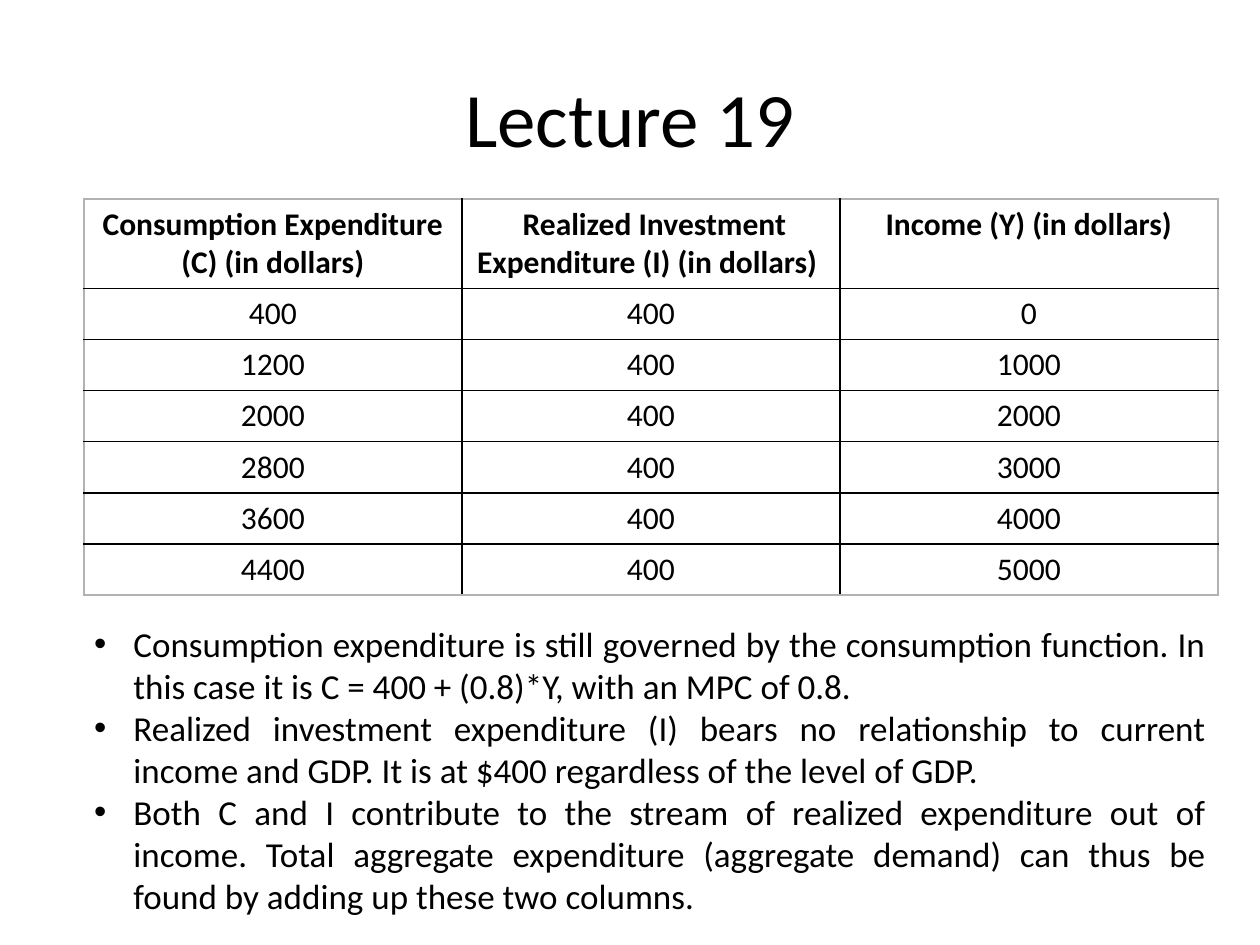
"""Build the Lecture 19 slide on consumption, investment and income."""
from dataclasses import dataclass

from lxml.etree import SubElement
from pptx import Presentation
from pptx.dml.color import RGBColor
from pptx.enum.text import MSO_ANCHOR, PP_ALIGN
from pptx.oxml.ns import qn
from pptx.util import Cm, Pt


@dataclass(frozen=True)
class Theme:
    """Colours, font and type sizes of the slide."""
    font: str = "Calibri"
    ink: str = "000000"
    outline: str = "B2B2B2"
    title_size: int = 44
    table_size: int = 18
    body_size: int = 20
    rule_width: float = 1


@dataclass(frozen=True)
class Frame:
    """Position and size in centimetres."""
    left: float
    top: float
    width: float
    height: float

    def lengths(self) -> tuple:
        """Return the four lengths for python-pptx."""
        return Cm(self.left), Cm(self.top), Cm(self.width), Cm(self.height)


@dataclass(frozen=True)
class Column:
    """One table column with its heading and values."""
    heading: str
    values: tuple


THEME = Theme()
TITLE_FRAME = Frame(1.27, 0.76, 22.86, 3.18)
TABLE_FRAME = Frame(1.69, 4.01, 22.86, 7.98)
NOTES_FRAME = Frame(1.65, 12.42, 22.91, 6.25)
HEADER_HEIGHT = 1.8
BULLET_INDENT = 0.79

INCOMES = tuple(range(0, 6000, 1000))
COLUMNS = (
    Column("Consumption Expenditure (C) (in dollars)",
           tuple(400 + income * 8 // 10 for income in INCOMES)),
    Column(" Realized Investment Expenditure (I) (in dollars) ",
           (400,) * len(INCOMES)),
    Column("Income (Y) (in dollars)", INCOMES),
)
NOTES = (
    "Consumption expenditure is still governed by the consumption function. "
    "In this case it is C = 400 + (0.8)*Y, with an MPC of 0.8.",
    "Realized investment expenditure (I) bears no relationship to current "
    "income and GDP. It is at $400 regardless of the level of GDP.",
    "Both C and I contribute to the stream of realized expenditure out of "
    "income. Total aggregate expenditure (aggregate demand) can thus be "
    "found by adding up these two columns.",
)


def write(para, text: str, *, size: int, bold: bool = False,
          align=PP_ALIGN.CENTER) -> None:
    """Write text into a paragraph with the given format."""
    para.alignment = align
    span = para.add_run()
    span.text = text
    span.font.name = THEME.font
    span.font.size = Pt(size)
    span.font.bold = bold
    span.font.color.rgb = RGBColor.from_string(THEME.ink)


def add_bullet(para) -> None:
    """Give a paragraph a round bullet and a hanging indent."""
    properties = para._p.get_or_add_pPr()
    properties.set("marL", str(Cm(BULLET_INDENT)))
    properties.set("indent", str(-Cm(BULLET_INDENT)))
    SubElement(properties, qn("a:buFont")).set("typeface", "Arial")
    SubElement(properties, qn("a:buChar")).set("char", "•")


def draw_borders(cell, outer_edges: dict) -> None:
    """Rule the four cell edges, lighter along the table outline."""
    properties = cell._tc.get_or_add_tcPr()
    for edge, is_outer in outer_edges.items():
        line = SubElement(properties, qn(f"a:{edge}"))
        line.set("w", str(Pt(THEME.rule_width)))
        fill = SubElement(line, qn("a:solidFill"))
        colour = THEME.outline if is_outer else THEME.ink
        SubElement(fill, qn("a:srgbClr")).set("val", colour)


def draw_table(page, frame: Frame, columns: tuple) -> None:
    """Draw the expenditure table."""
    row_count = len(columns[0].values) + 1
    table = page.shapes.add_table(
        row_count, len(columns), *frame.lengths()).table
    table.first_row = table.horz_banding = False
    body_height = (frame.height - HEADER_HEIGHT) / (row_count - 1)
    for index, row in enumerate(table.rows):
        row.height = Cm(body_height if index else HEADER_HEIGHT)
    for column_index, column in enumerate(columns):
        table.columns[column_index].width = Cm(frame.width / len(columns))
        for row_index, value in enumerate((column.heading, *column.values)):
            cell = table.cell(row_index, column_index)
            write(cell.text_frame.paragraphs[0], str(value),
                  size=THEME.table_size, bold=row_index == 0)
            draw_borders(cell, {
                "lnL": column_index == 0,
                "lnR": column_index == len(columns) - 1,
                "lnT": row_index == 0,
                "lnB": row_index == row_count - 1,
            })
            cell.fill.background()


def draw_title(page, frame: Frame, text: str) -> None:
    """Place and fill the title placeholder."""
    title = page.shapes.title
    title.left, title.top, title.width, title.height = frame.lengths()
    title.text_frame.vertical_anchor = MSO_ANCHOR.MIDDLE
    write(title.text_frame.paragraphs[0], text, size=THEME.title_size)


def draw_notes(page, frame: Frame, notes: tuple) -> None:
    """Draw the bulleted remarks below the table."""
    box = page.shapes.add_textbox(*frame.lengths()).text_frame
    box.word_wrap = True
    for index, note in enumerate(notes):
        para = box.add_paragraph() if index else box.paragraphs[0]
        write(para, note, size=THEME.body_size, align=PP_ALIGN.JUSTIFY)
        add_bullet(para)


def main() -> None:
    """Build and save the deck."""
    deck = Presentation()
    deck.slide_width, deck.slide_height = Cm(25.4), Cm(19.05)
    page = deck.slides.add_slide(deck.slide_layouts.get_by_name("Title Only"))
    draw_title(page, TITLE_FRAME, "Lecture 19")
    draw_table(page, TABLE_FRAME, COLUMNS)
    draw_notes(page, NOTES_FRAME, NOTES)
    deck.save("out.pptx")


if __name__ == "__main__":
    main()
